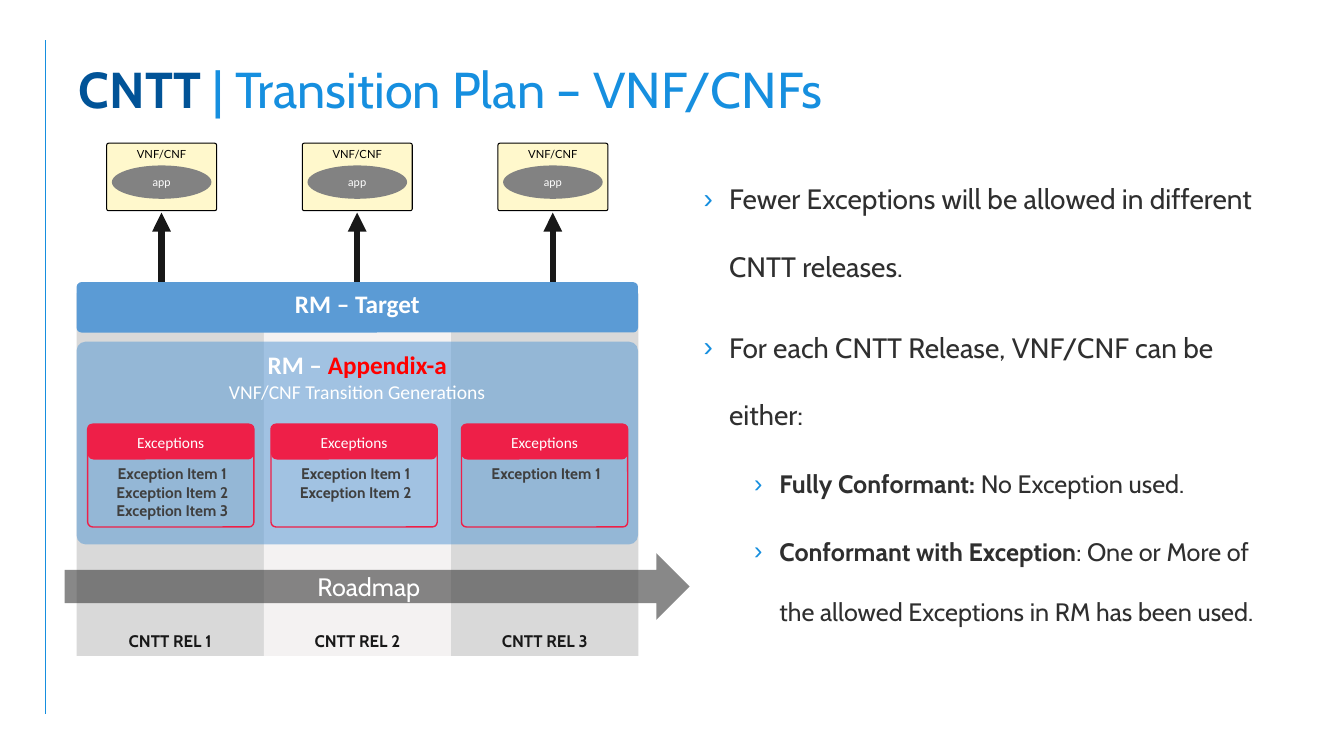
"""Build the CNTT transition plan slide."""
from lxml import etree
from pptx import Presentation
from pptx.dml.color import RGBColor
from pptx.enum.shapes import MSO_CONNECTOR, MSO_SHAPE
from pptx.enum.text import MSO_ANCHOR, MSO_AUTO_SIZE, PP_ALIGN
from pptx.oxml.ns import qn
from pptx.util import Cm, Pt

RECT, ROUND = MSO_SHAPE.RECTANGLE, MSO_SHAPE.ROUNDED_RECTANGLE
OVAL, ARROW = MSO_SHAPE.OVAL, MSO_SHAPE.RIGHT_ARROW
STRAIGHT = MSO_CONNECTOR.STRAIGHT
TOP, MIDDLE, BOTTOM = MSO_ANCHOR.TOP, MSO_ANCHOR.MIDDLE, MSO_ANCHOR.BOTTOM
LEFT, CENTER = PP_ALIGN.LEFT, PP_ALIGN.CENTER
NO_FIT = MSO_AUTO_SIZE.NONE

TITLE = [[("CNTT", "brand"), (" | Transition Plan – VNF/CNFs", "title")]]
POINTS = [
    (0, [("Fewer Exceptions will be allowed in different CNTT releases.", "point")]),
    (0, [("For each CNTT Release, VNF/CNF can be either:", "point")]),
    (1, [("Fully Conformant:", "term"), (" No Exception used.", "detail")]),
    (1, [("Conformant with Exception", "term"),
         (": One or More of the allowed Exceptions in RM has been used.", "detail")]),
]
TARGET = [[("RM – Target", "band")]]
APPENDIX = [[("RM – ", "band"), ("Appendix-a", "alert")],
            [("VNF/CNF Transition Generations", "sub")]]
ROADMAP = [[("Roadmap", "road")]]
STAGES = [
    {"name": "CNTT REL 1", "shade": "grey", "left": 2.21, "count": 3},
    {"name": "CNTT REL 2", "shade": "pale", "left": 6.83, "count": 2},
    {"name": "CNTT REL 3", "shade": "grey", "left": 11.63, "count": 1},
]

THEME = {
    "ink": {
        "navy": "015397", "sky": "168FDF", "text": "2F2F2F", "black": "000000",
        "dark": "181818", "item": "3F3F3F", "white": "FFFFFF", "red": "FF0000",
        "rose": "EE1F48", "blue": "5B9BD5", "grey": "D9D9D9", "pale": "F4F2F2",
        "cream": "FFF8CC", "stone": "828282", "coal": "363636",
    },
    "type": {
        "brand": ("navy", {"name": "Cabin", "size": Pt(36), "bold": True}),
        "title": ("sky", {"name": "Cabin", "size": Pt(36), "bold": False}),
        "point": ("text", {"name": "Cabin", "size": Pt(20), "bold": False}),
        "term": ("text", {"name": "Cabin", "size": Pt(18), "bold": True}),
        "detail": ("text", {"name": "Cabin", "size": Pt(18), "bold": False}),
        "band": ("white", {"name": "Calibri", "size": Pt(18), "bold": True}),
        "alert": ("red", {"name": "Calibri", "size": Pt(18), "bold": True}),
        "sub": ("white", {"name": "Calibri", "size": Pt(14), "bold": False}),
        "road": ("white", {"name": "Cabin", "size": Pt(18), "bold": False}),
        "stage": ("dark", {"name": "Cabin", "size": Pt(12), "bold": True}),
        "head": ("white", {"name": "Calibri", "size": Pt(11), "bold": False}),
        "item": ("item", {"name": "Cabin", "size": Pt(11), "bold": True}),
        "node": ("black", {"name": "Lato", "size": Pt(8), "bold": False}),
        "app": ("white", {"name": "Lato", "size": Pt(8), "bold": False}),
    },
}
TIGHT = {"margin_left": Cm(0.18), "margin_right": Cm(0.18),
         "margin_top": Cm(0.1), "margin_bottom": Cm(0.1)}


def ink(name):
    """Return a theme colour."""
    return RGBColor.from_string(THEME["ink"][name])


def apply(thing, form):
    """Set each attribute of a format."""
    for key, value in form.items():
        setattr(thing, key, value)


def add_part(parent, tag, **attrs):
    """Append a drawing element."""
    return etree.SubElement(parent, qn(tag), attrs)


def write(frame, lines, align=CENTER, **form):
    """Fill a text frame with lines of styled runs."""
    apply(frame, {"word_wrap": True, "auto_size": NO_FIT, **form})
    for spot, runs in enumerate(lines):
        para = frame.add_paragraph() if spot else frame.paragraphs[0]
        para.alignment = align
        for text, style in runs:
            run = para.add_run()
            run.text = text
            tint, font = THEME["type"][style]
            apply(run.font, font)
            run.font.color.rgb = ink(tint)


def place(shape, box):
    """Move a shape to a box given in centimetres."""
    apply(shape, dict(zip(("left", "top", "width", "height"), map(Cm, box))))


def draw(slide, kind, box, lines=(), fill=None, line=None, bend=None,
         alpha=None, **form):
    """Draw a preset shape with its text."""
    shape = slide.shapes.add_shape(kind, *map(Cm, box))
    shape.shadow.inherit = False
    if fill:
        shape.fill.solid()
        shape.fill.fore_color.rgb = ink(fill)
    else:
        shape.fill.background()
    if alpha:
        tint = shape.fill._xPr.find(".//" + qn("a:srgbClr"))
        add_part(tint, "a:alpha", val=str(alpha * 1000))
    if line:
        shape.line.color.rgb = ink(line[0])
        shape.line.width = Pt(line[1])
    else:
        shape.line.fill.background()
    if bend:
        shape.adjustments[0] = bend
    write(shape.text_frame, lines, **form)


def link(slide, ends, tint, width, head=False):
    """Draw a straight line, with an arrowhead at its start if asked."""
    line = slide.shapes.add_connector(STRAIGHT, *map(Cm, ends))
    line.line.color.rgb = ink(tint)
    line.line.width = Pt(width)
    if head:
        add_part(line.line._get_or_add_ln(), "a:headEnd", type="triangle")
    add_part(line._element.spPr, "a:effectLst")


def fill_list(frame):
    """Write the bullet list."""
    write(frame, [runs for _, runs in POINTS], LEFT, vertical_anchor=TOP)
    for spot, (level, _) in enumerate(POINTS):
        para = frame.paragraphs[spot]
        props = para._p.get_or_add_pPr()
        props.set("marL", str(Cm(0.64 + 1.27 * level)))
        props.set("indent", str(-Cm(0.64)))
        tint = add_part(props, "a:buClr")
        add_part(tint, "a:srgbClr", val=THEME["ink"]["sky"])
        add_part(props, "a:buChar", char="›")
        gap = (5 if level else 10) if spot else 0
        apply(para, {"level": level, "line_spacing": 2.0, "space_before": Pt(gap)})


def add_node(slide, left):
    """Draw a VNF/CNF box with its app and arrow."""
    draw(slide, ROUND, (left, 3.61, 2.77, 1.7), [[("VNF/CNF", "node")]], "cream",
         ("black", 0.75), 0.028, vertical_anchor=TOP, **TIGHT)
    draw(slide, OVAL, (left + 0.13, 4.17, 2.51, 0.84), [[("app", "app")]], "stone",
         vertical_anchor=MIDDLE, **TIGHT)
    mid = left + 1.38
    link(slide, (mid, 5.36, mid, 7.11), "dark", 4.5, head=True)


def add_card(slide, left, count):
    """Draw a card of exceptions."""
    draw(slide, ROUND, (left, 10.69, 4.19, 2.59), line=("rose", 1), bend=0.048)
    draw(slide, ROUND, (left, 10.69, 4.19, 0.89), [[("Exceptions", "head")]], "rose",
         vertical_anchor=MIDDLE)
    box = slide.shapes.add_textbox(*map(Cm, (left + 0.04, 11.58, 4.19, 0.26 + 0.47 * count)))
    items = [[(f"Exception Item {num + 1}", "item")] for num in range(count)]
    write(box.text_frame, items, vertical_anchor=TOP)


def main():
    """Build and save the slide."""
    deck = Presentation()
    apply(deck, {"slide_width": Cm(33.87), "slide_height": Cm(19.05)})
    slide = deck.slides.add_slide(deck.slide_layouts[1])
    title, body = slide.placeholders
    place(title, (1.73, 1.02, 30.38, 2.59))
    write(title.text_frame, TITLE, LEFT, vertical_anchor=MIDDLE)
    title.text_frame.paragraphs[0].line_spacing = 0.9
    place(body, (17.48, 3.61, 15.04, 12.78))
    fill_list(body.text_frame)
    link(slide, (1.14, 1.02, 1.14, 17.98), "sky", 0.5)

    for spot, stage in enumerate(STAGES):
        draw(slide, RECT, (1.93 + 4.72 * spot, 7.39, 4.72, 9.14),
             [[(stage["name"], "stage")]], stage["shade"], vertical_anchor=BOTTOM)
    draw(slide, ROUND, (1.93, 8.61, 14.15, 5.11), APPENDIX, "blue", bend=0.045,
         alpha=54, vertical_anchor=TOP)
    draw(slide, ROUND, (1.93, 7.11, 14.15, 1.27), TARGET, "blue", bend=0.098,
         vertical_anchor=TOP)
    for spot, stage in enumerate(STAGES):
        add_card(slide, stage["left"], stage["count"])
        add_node(slide, 2.69 + 4.93 * spot)
    draw(slide, ARROW, (1.63, 13.94, 15.75, 1.68), ROADMAP, "coal", alpha=59,
         vertical_anchor=MIDDLE)
    deck.save("out.pptx")


if __name__ == "__main__":
    main()
